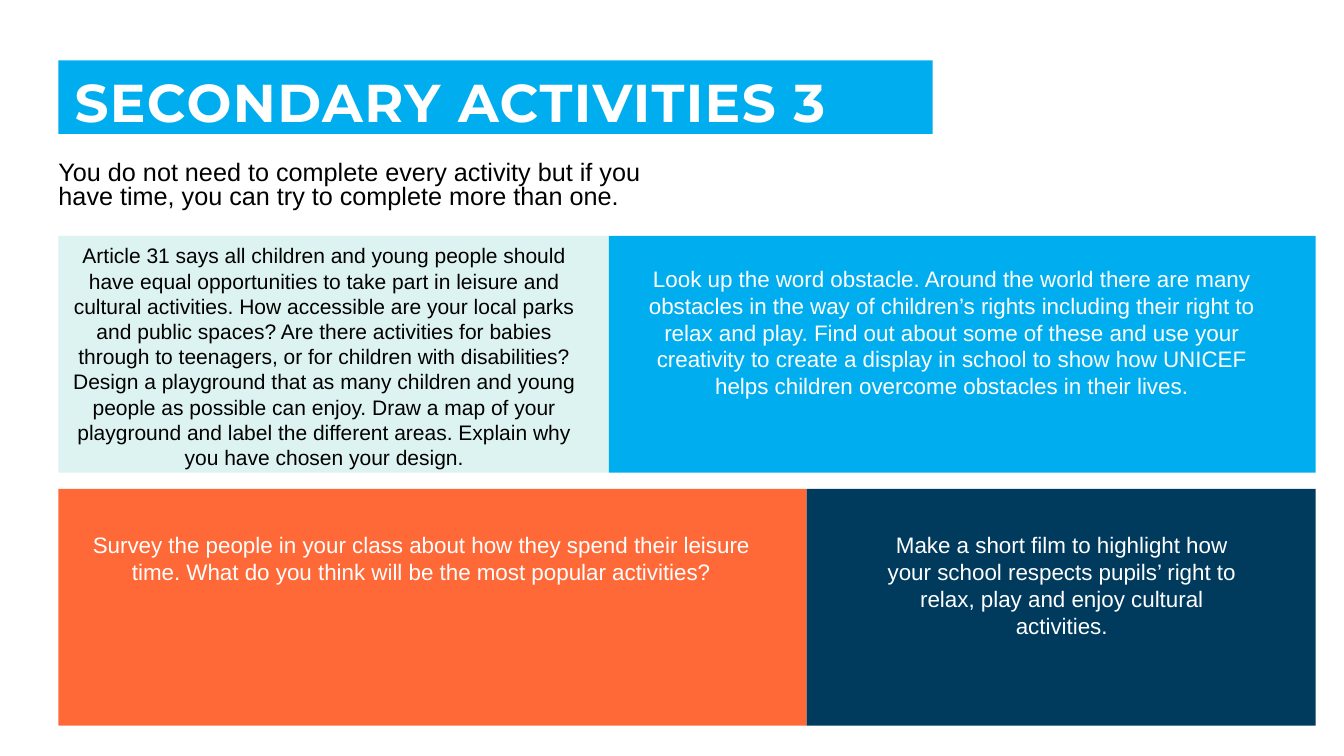
from dataclasses import dataclass

from pptx import Presentation
from pptx.dml.color import RGBColor
from pptx.enum.shapes import MSO_SHAPE
from pptx.enum.text import MSO_ANCHOR, PP_ALIGN
from pptx.shapes.base import BaseShape
from pptx.slide import Slide
from pptx.util import Inches, Pt

RECTANGLE = MSO_SHAPE.RECTANGLE
TOP, MIDDLE = MSO_ANCHOR.TOP, MSO_ANCHOR.MIDDLE
LEFT, CENTER = PP_ALIGN.LEFT, PP_ALIGN.CENTER

WHITE = RGBColor(0xFF, 0xFF, 0xFF)
BLACK = RGBColor(0x00, 0x00, 0x00)
CYAN = RGBColor(0x00, 0xAE, 0xEF)
MINT = RGBColor(0xDD, 0xF3, 0xF1)
ORANGE = RGBColor(0xFF, 0x69, 0x37)
NAVY = RGBColor(0x00, 0x3B, 0x5E)

SLIDE_WIDTH, SLIDE_HEIGHT = Inches(13.33), Inches(7.5)
# The slide is a grid of 100 columns by 100 rows.
COLUMN, ROW = SLIDE_WIDTH / 100, SLIDE_HEIGHT / 100
MARGIN_LEFT, CARDS_RIGHT = 4.35, 97.9
UPPER_SPLIT, LOWER_SPLIT = 45.31, 60.02
CARD_ROWS, CARD_GAP = 31.33, 2.14
UPPER_TOP = 31.2
LOWER_TOP = UPPER_TOP + CARD_ROWS + CARD_GAP


@dataclass(frozen=True)
class Area:
    """A place on the grid, in columns and rows."""
    column: float
    row: float
    columns: float
    rows: float

    def box(self) -> tuple[int, int, int, int]:
        return (round(self.column * COLUMN), round(self.row * ROW),
                round(self.columns * COLUMN), round(self.rows * ROW))


@dataclass(frozen=True)
class TextStyle:
    size: float
    color: RGBColor
    font: str = "Arial"
    bold: bool = False
    align: PP_ALIGN = CENTER
    anchor: MSO_ANCHOR = TOP
    line_spacing: float = 1.0
    insets: tuple[float, float, float, float] = (0.1, 0.05, 0.1, 0.05)


@dataclass(frozen=True)
class Activity:
    card: Area
    fill: RGBColor
    text_area: Area
    style: TextStyle
    text: str


TITLE_AREA = Area(MARGIN_LEFT, 8, 65.04, 9.73)
TITLE_STYLE = TextStyle(38, WHITE, "Montserrat", True, LEFT, MIDDLE, 0.9,
                        (0.16, 0.16, 0.12, 0))
INTRO_AREA = Area(MARGIN_LEFT, 20.8, 46.59, 8.27)
INTRO_STYLE = TextStyle(18, BLACK, align=LEFT, line_spacing=0.8,
                        insets=(0, 0.05, 0.1, 0.05))
DARK_STYLE = TextStyle(15, BLACK)
LIGHT_STYLE = TextStyle(16, WHITE)


def card_area(left: float, right: float, top: float) -> Area:
    return Area(left, top, right - left, CARD_ROWS)


ACTIVITIES = (
    Activity(
        card_area(MARGIN_LEFT, UPPER_SPLIT, UPPER_TOP), MINT,
        Area(4.28, 31.47, 39.68, 31.6), DARK_STYLE,
        "Article 31 says all children and young people should have equal "
        "opportunities to take part in leisure and cultural activities. How "
        "accessible are your local parks and public spaces? Are there "
        "activities for babies through to teenagers, or for children with "
        "disabilities? Design a playground that as many children and young "
        "people as possible can enjoy. Draw a map of your playground and "
        "label the different areas. Explain why you have chosen your design."),
    Activity(
        card_area(MARGIN_LEFT, LOWER_SPLIT, LOWER_TOP), ORANGE,
        Area(5.4, 69.6, 51.91, 8.53), LIGHT_STYLE,
        "Survey the people in your class about how they spend their leisure "
        "time. What do you think will be the most popular activities?"),
    Activity(
        card_area(UPPER_SPLIT, CARDS_RIGHT, UPPER_TOP), CYAN,
        Area(47.41, 34.4, 46.81, 19.33), LIGHT_STYLE,
        "Look up the word obstacle. Around the world there are many obstacles "
        "in the way of children’s rights including their right to relax and "
        "play. Find out about some of these and use your creativity to create "
        "a display in school to show how UNICEF helps children overcome "
        "obstacles in their lives."),
    Activity(
        card_area(LOWER_SPLIT, CARDS_RIGHT, LOWER_TOP), NAVY,
        Area(64.52, 69.6, 28.96, 15.73), LIGHT_STYLE,
        "Make a short film to highlight how your school respects pupils’ "
        "right to relax, play and enjoy cultural activities."),
)


def add_panel(slide: Slide, area: Area, fill: RGBColor) -> BaseShape:
    panel = slide.shapes.add_shape(RECTANGLE, *area.box())
    panel.shadow.inherit = False
    panel.fill.solid()
    panel.fill.fore_color.rgb = fill
    panel.line.fill.background()
    return panel


def write_text(shape: BaseShape, text: str, style: TextStyle) -> None:
    frame = shape.text_frame
    frame.word_wrap = True
    frame.vertical_anchor = style.anchor
    (frame.margin_left, frame.margin_top,
     frame.margin_right, frame.margin_bottom) = map(Inches, style.insets)
    paragraph = frame.paragraphs[0]
    paragraph.text = text
    paragraph.alignment = style.align
    paragraph.line_spacing = style.line_spacing
    paragraph.font.name = style.font
    paragraph.font.size = Pt(style.size)
    paragraph.font.bold = style.bold
    paragraph.font.color.rgb = style.color


def add_text(slide: Slide, area: Area, text: str, style: TextStyle) -> None:
    write_text(slide.shapes.add_textbox(*area.box()), text, style)


def add_title(slide: Slide) -> None:
    title = add_panel(slide, TITLE_AREA, CYAN)
    write_text(title, "SECONDARY ACTIVITIES 3", TITLE_STYLE)
    # Letter spacing of one point, in hundredths of a point.
    run = title.text_frame.paragraphs[0].runs[0]
    run.font._element.set("spc", "100")


def main() -> None:
    presentation = Presentation()
    presentation.slide_width = SLIDE_WIDTH
    presentation.slide_height = SLIDE_HEIGHT
    slide = presentation.slides.add_slide(presentation.slide_layouts[6])
    add_title(slide)
    add_text(slide, INTRO_AREA,
             "You do not need to complete every activity but if you have "
             "time, you can try to complete more than one.", INTRO_STYLE)
    for activity in ACTIVITIES:
        add_panel(slide, activity.card, activity.fill)
    for activity in ACTIVITIES:
        add_text(slide, activity.text_area, activity.text, activity.style)
    presentation.save("out.pptx")


if __name__ == "__main__":
    main()
